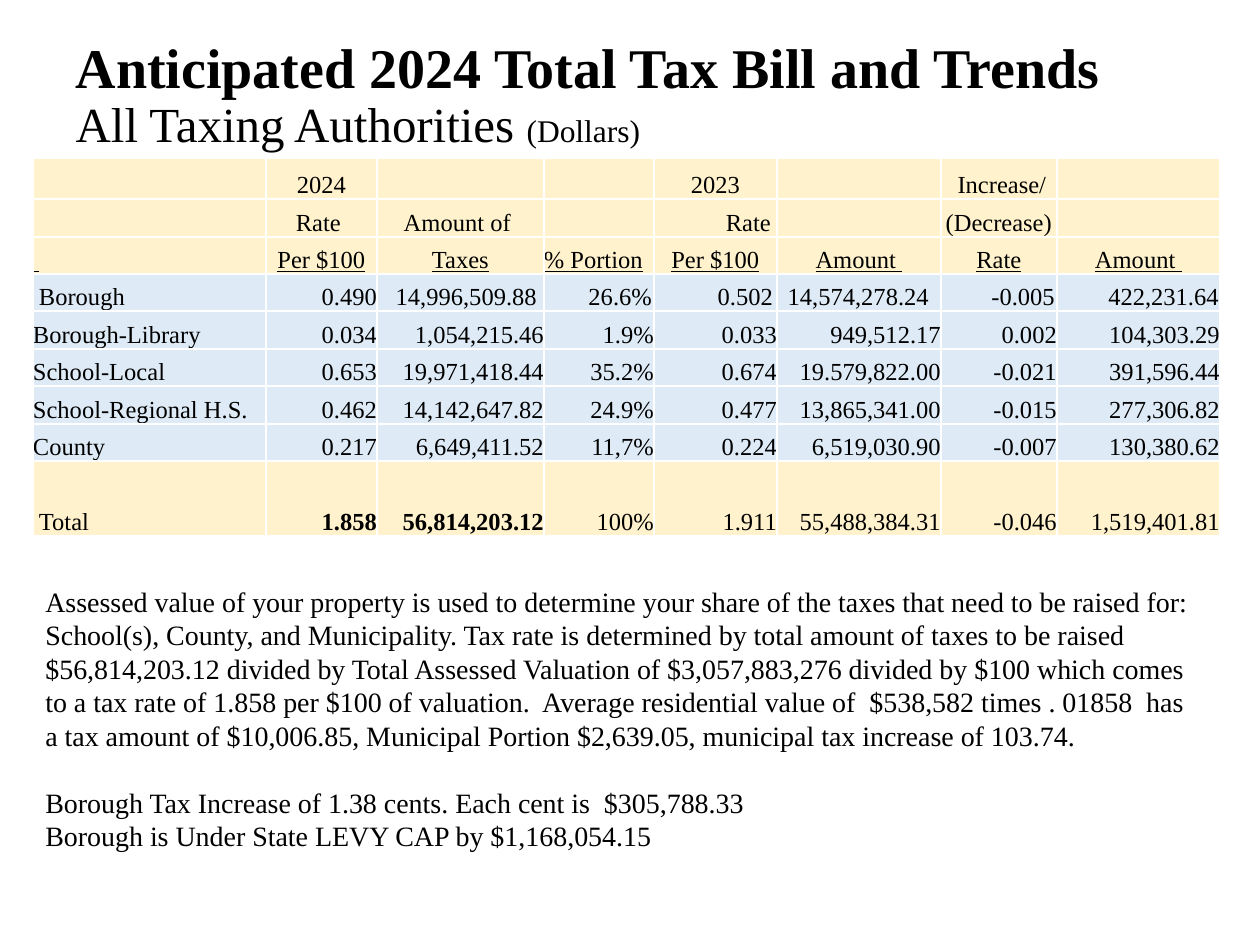
from dataclasses import dataclass

from lxml import etree
from pptx import Presentation
from pptx import util as u
from pptx.dml.color import RGBColor
from pptx.enum import text
from pptx.oxml.ns import qn

PX_PER_INCH = 126
FONT = "Times New Roman"
BLACK = RGBColor(0x00, 0x00, 0x00)
WHITE = RGBColor(0xFF, 0xFF, 0xFF)
CREAM = RGBColor(0xFF, 0xF2, 0xCC)
PALE_BLUE = RGBColor(0xDE, 0xEB, 0xF7)
LEFT, CENTER, RIGHT = text.PP_ALIGN.LEFT, text.PP_ALIGN.CENTER, text.PP_ALIGN.RIGHT

COLUMN_WIDTHS = (233, 111, 167, 110, 123, 164, 116, 163)
HEADER_ROWS = 3


@dataclass(frozen=True)
class TaxRow:
    height: int
    values: tuple[str, ...]
    fill: RGBColor = PALE_BLUE
    underline: bool = False
    bold_columns: tuple[int, ...] = ()
    insets: tuple[int, ...] = (0,) * 8  # from the aligned side


TAX_ROWS = (
    TaxRow(41, ("", "2024", "", "", "2023", "", " Increase/", ""), CREAM),
    TaxRow(38, ("", "Rate ", "Amount of ", "", "Rate", "", "(Decrease)", ""), CREAM,
           insets=(0, 0, 0, 0, 6, 0, 0, 0)),
    TaxRow(37, (" ", "Per $100", "Taxes", "% Portion", "Per $100", "Amount ",
                "Rate", "Amount "), CREAM, underline=True),
    TaxRow(37, ("Borough", "0.490", "14,996,509.88", "26.6%", "0.502",
                "14,574,278.24", "-0.005", "422,231.64"),
           insets=(6, 0, 7, 2, 4, 12, 2, 1)),
    TaxRow(38, ("Borough-Library", "0.034", "1,054,215.46", "1.9%", "0.033",
                "949,512.17", "0.002", "104,303.29")),
    TaxRow(37, ("School-Local", "0.653", "19,971,418.44", "35.2%", "0.674",
                "19.579,822.00", "-0.021", "391,596.44")),
    TaxRow(38, ("School-Regional H.S.", "0.462", "14,142,647.82", "24.9%", "0.477",
                "13,865,341.00", "-0.015", "277,306.82")),
    TaxRow(37, ("County", "0.217", "6,649,411.52", "11,7%", "0.224",
                "6,519,030.90", "-0.007", "130,380.62")),
    TaxRow(75, ("Total", "1.858", "56,814,203.12", "100%", "1.911",
                "55,488,384.31", "-0.046", "1,519,401.81"), CREAM,
           bold_columns=(1, 2), insets=(6, 0, 0, 0, 0, 0, 0, 0)),
)

EXPLANATION = (
    "Assessed value of your property is used to determine your share of the taxes "
    "that need to be raised for: School(s), County, and Municipality. Tax rate is "
    "determined by total amount of taxes to be raised $56,814,203.12 divided by "
    "Total Assessed Valuation of $3,057,883,276 divided by $100 which comes to a "
    "tax rate of 1.858 per $100 of valuation.  Average residential value of  "
    "$538,582 times . 01858  has a tax amount of $10,006.85, Municipal Portion "
    "$2,639.05, municipal tax increase of 103.74."
)
BOROUGH_INCREASE = "Borough Tax Increase of 1.38 cents. Each cent is  $305,788.33"
LEVY_CAP = "Borough is Under State LEVY CAP by $1,168,054.15"


def px(length: int) -> u.Emu:
    return u.Emu(round(length * 914400 / PX_PER_INCH))


def add_run(paragraph, words: str, size: int, bold: bool = False,
            underline: bool = False) -> None:
    run = paragraph.add_run()
    run.text = words
    run.font.name = FONT
    run.font.size = u.Pt(size)
    run.font.bold = bold
    run.font.underline = underline
    run.font.color.rgb = BLACK


def add_borders(cell) -> None:
    properties = cell._tc.get_or_add_tcPr()
    for side in ("a:lnL", "a:lnR", "a:lnT", "a:lnB"):
        line = etree.SubElement(properties, qn(side), w=str(u.Pt(1)))
        fill = etree.SubElement(line, qn("a:solidFill"))
        etree.SubElement(fill, qn("a:srgbClr"), val=str(WHITE))


def column_alignment(row: int, column: int):
    if row >= HEADER_ROWS:
        return LEFT if column == 0 else RIGHT
    if (row, column) == (1, 4):
        return RIGHT
    return LEFT if row == 2 and column in (0, 3) else CENTER


def fill_cell(cell, tax_row: TaxRow, row: int, column: int) -> None:
    alignment = column_alignment(row, column)
    inset = px(tax_row.insets[column])
    cell.margin_top = cell.margin_bottom = 0
    cell.margin_left = inset if alignment == LEFT else 0
    cell.margin_right = inset if alignment == RIGHT else 0
    cell.vertical_anchor = text.MSO_ANCHOR.BOTTOM
    add_borders(cell)
    cell.fill.solid()
    cell.fill.fore_color.rgb = tax_row.fill
    paragraph = cell.text_frame.paragraphs[0]
    paragraph.alignment = alignment
    if tax_row.values[column]:
        add_run(paragraph, tax_row.values[column], 14,
                column in tax_row.bold_columns, tax_row.underline)
    else:  # keeps an empty cell from stretching its row
        etree.SubElement(paragraph._p, qn("a:endParaRPr"), sz="1400")


def add_title(slide) -> None:
    title = slide.shapes.title
    title.left, title.top, title.width, title.height = map(px, (63, 21, 1134, 151))
    frame = title.text_frame
    frame.word_wrap = True
    frame.auto_size = text.MSO_AUTO_SIZE.NONE
    frame.vertical_anchor = text.MSO_ANCHOR.MIDDLE
    heading = frame.paragraphs[0]
    heading.alignment = LEFT
    heading.line_spacing = 0.9
    add_run(heading, "Anticipated 2024 Total Tax Bill and Trends", 32, bold=True)
    heading.add_line_break()
    add_run(heading, "All Taxing Authorities ", 28)
    add_run(heading, "(Dollars)", 18)


def add_explanation(slide) -> None:
    box = slide.shapes.add_textbox(*map(px, (33, 578, 1174, 306)))
    frame = box.text_frame
    frame.word_wrap = True
    for index, words in enumerate((EXPLANATION, BOROUGH_INCREASE, LEVY_CAP)):
        paragraph = frame.paragraphs[0] if index == 0 else frame.add_paragraph()
        if words == BOROUGH_INCREASE:
            paragraph.space_before = u.Pt(19)
        add_run(paragraph, words, 16)


def add_tax_table(slide) -> None:
    heights = [tax_row.height for tax_row in TAX_ROWS]
    tax_table = slide.shapes.add_table(
        len(TAX_ROWS), len(COLUMN_WIDTHS), px(33), px(158),
        px(sum(COLUMN_WIDTHS)), px(sum(heights))).table
    tax_table.first_row = tax_table.horz_banding = False
    for column, width in zip(tax_table.columns, COLUMN_WIDTHS):
        column.width = px(width)
    for row, tax_row in enumerate(TAX_ROWS):
        tax_table.rows[row].height = px(tax_row.height)
        for column in range(len(COLUMN_WIDTHS)):
            fill_cell(tax_table.cell(row, column), tax_row, row, column)


def main() -> None:
    deck = Presentation()
    deck.slide_width, deck.slide_height = px(1260), px(945)
    slide = deck.slides.add_slide(deck.slide_layouts[5])
    add_title(slide)
    add_explanation(slide)
    add_tax_table(slide)
    deck.save("out.pptx")


if __name__ == "__main__":
    main()
